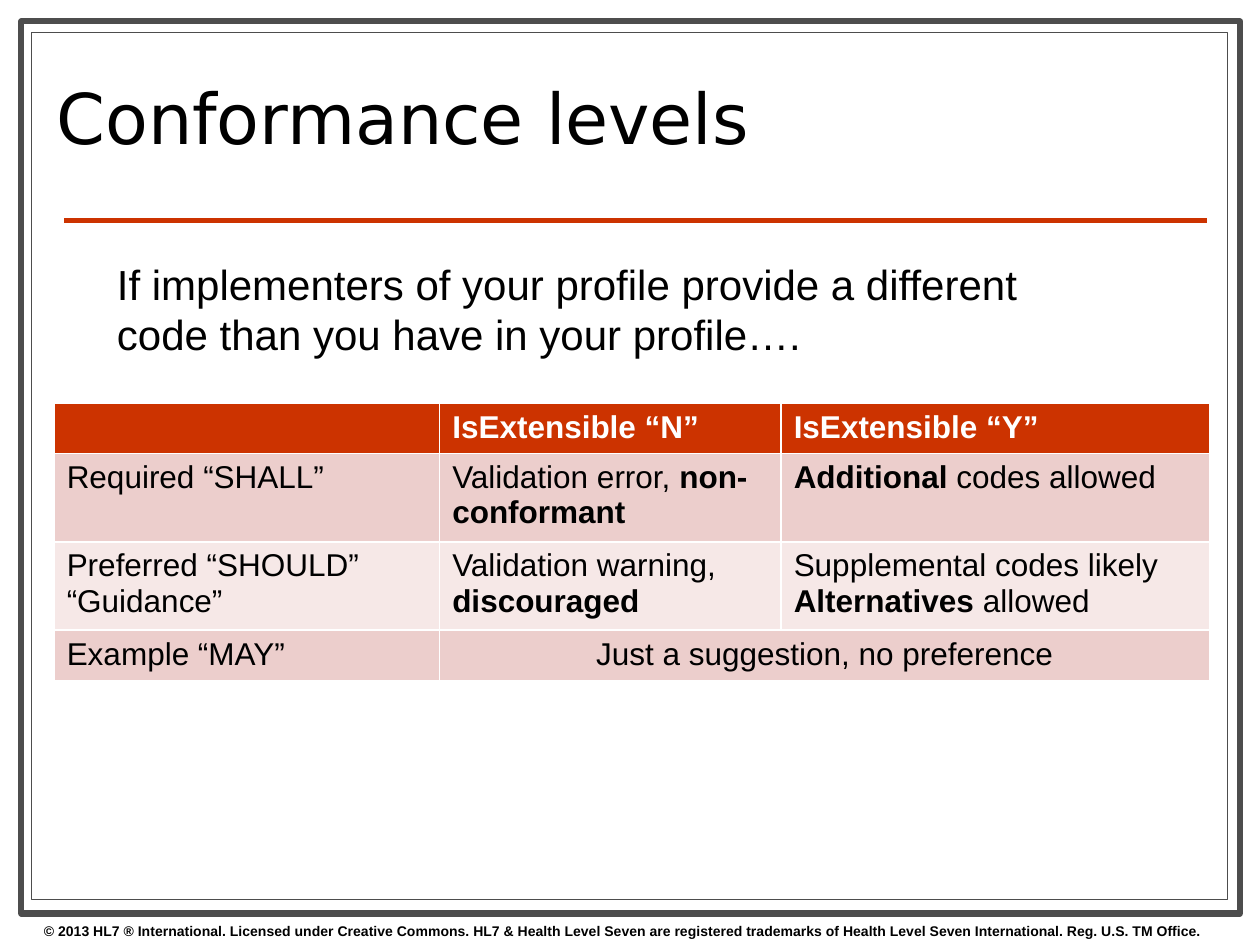
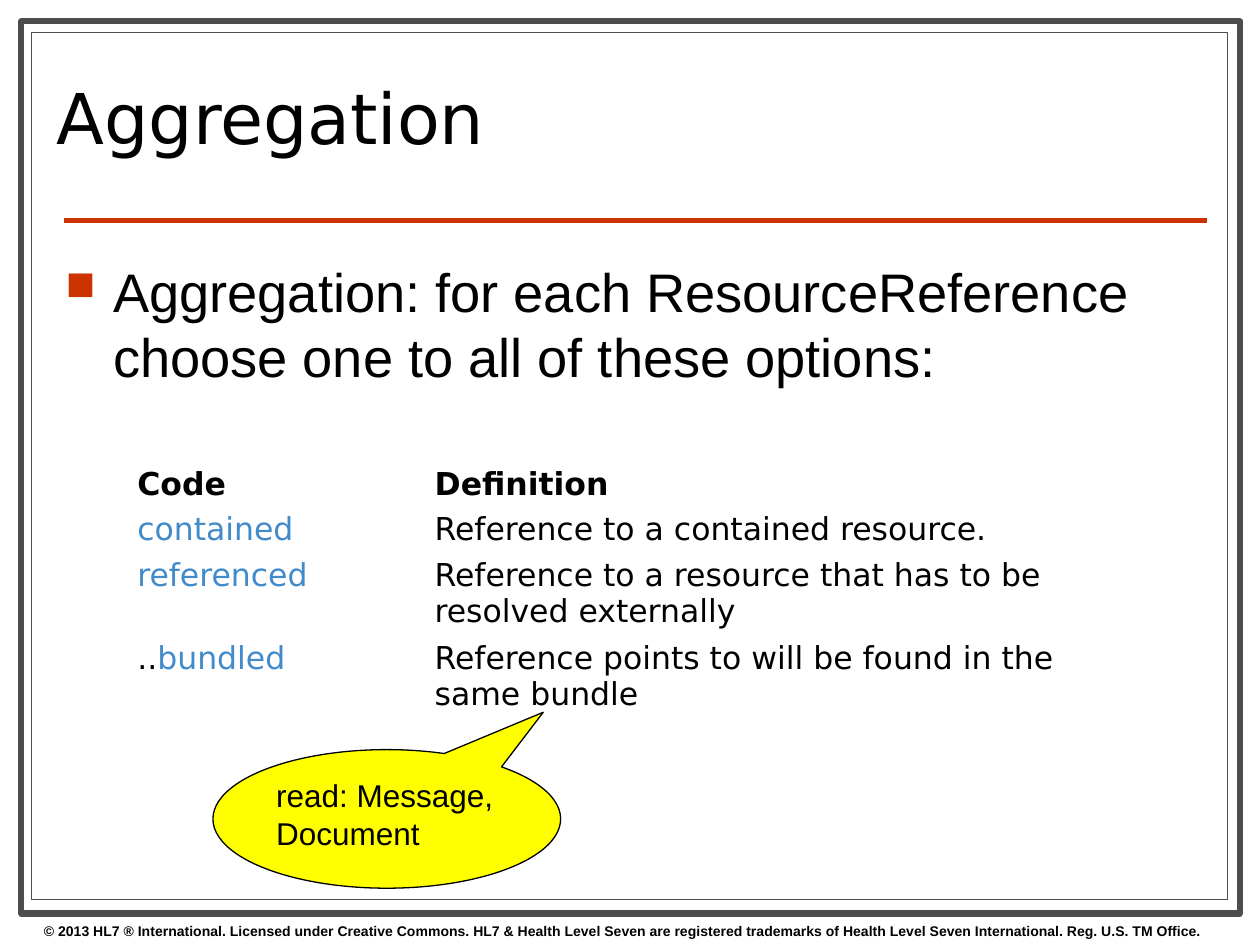
import pptx
import pptx.util
import pptx.dml.color
import pptx.enum.shapes
import pptx.enum.text
import pptx.oxml
import pptx.oxml.ns

Inches, Pt = pptx.util.Inches, pptx.util.Pt
Shape = pptx.enum.shapes.MSO_SHAPE
Align = pptx.enum.text.PP_ALIGN
Anchor = pptx.enum.text.MSO_ANCHOR

# Content: a cell is a list of paragraphs, a paragraph a list of (text, style)
FOOTER = ("© 2013 HL7 ® International. Licensed under Creative Commons. "
          "HL7 & Health Level Seven are registered trademarks of "
          "Health Level Seven International. Reg. U.S. TM Office.")
LEVELS = "Conformance levels"
INTRO = ("If implementers of your profile provide a different code "
         "than you have in your profile….")
RULES = [
    [[], [[("IsExtensible “N”", "b")]], [[("IsExtensible “Y”", "b")]]],
    [[[("Required “SHALL”", "")]],
     [[("Validation error, ", ""), ("non-conformant", "b")]],
     [[("Additional", "b"), (" codes allowed", "")]]],
    [[[("Preferred “SHOULD”", "")], [("“Guidance”", "")]],
     [[("Validation warning, ", ""), ("discouraged", "b")]],
     [[("Supplemental codes likely", "")],
      [("Alternatives", "b"), (" allowed", "")]]],
    [[[("Example “MAY”", "")]], [[("Just a suggestion, no preference", "")]], []],
]
TOPIC = "Aggregation"
POINT = ("Aggregation: for each ResourceReference "
         "choose one to all of these options:")
CODES = [
    [[[("Code", "b")]], [[("Definition", "b")]]],
    [[[("contained", "link")]], [[("Reference to a contained resource.", "")]]],
    [[[("referenced", "link")]],
     [[("Reference to a resource that has to be resolved externally", "")]]],
    [[[("..", ""), ("bundled", "link")]],
     [[("Reference points to will be found in the same bundle", "")]]],
]
HINT = "read: Message, Document"

# Shared look
SANS, HEAD = "Arial", "DejaVu Sans"
BLACK, WHITE, GREY, RED = "000000", "FFFFFF", "4D4D4D", "CC3300"
LINK, YELLOW = "428BCA", "FFFF00"
BANDS = ["ECCECC", "F6E8E7"]
FRAMES = [((0.17, 0.17, 9.67, 7.08), 3.5), ((0.25, 0.26, 9.49, 6.88), 0.75)]


def tint(hue):
    return pptx.dml.color.RGBColor.from_string(hue)


def paint(font, size, face=SANS, hue=BLACK, bold=False):
    font.size, font.name, font.bold = Pt(size), face, bold
    font.color.rgb = tint(hue)


def add_box(slide, place, text, size, **look):
    box = slide.shapes.add_textbox(*map(Inches, place))
    frame = box.text_frame
    frame.word_wrap = True
    frame.text = text
    paint(frame.paragraphs[0].runs[0].font, size, **look)
    return frame


def add_form(slide, kind, place, fill, edge, width):
    form = slide.shapes.add_shape(kind, *map(Inches, place))
    form.shadow.inherit = False
    form.fill.solid()
    form.fill.fore_color.rgb = tint(fill)
    form.line.color.rgb = tint(edge)
    form.line.width = Pt(width)
    return form


def add_grid(slide, left, top, cols, rows, data, fills, face, hues, inset=None):
    grid = slide.shapes.add_table(
        len(rows), len(cols), Inches(left), Inches(top),
        Inches(sum(cols)), Inches(sum(rows))).table
    for col, width in zip(grid.columns, cols):
        col.width = Inches(width)
    for r, (height, line) in enumerate(zip(rows, data)):
        grid.rows[r].height = Inches(height)
        for c, paras in enumerate(line):
            cell = grid.cell(r, c)
            cell.fill.solid()
            cell.fill.fore_color.rgb = tint(fills[r])
            if inset is not None:
                cell.margin_left = cell.margin_right = Inches(inset)
                cell.margin_top = cell.margin_bottom = Inches(inset)
            frame = cell.text_frame
            if not paras:
                frame.paragraphs[0].font.size = Pt(18)
            for i, runs in enumerate(paras):
                para = frame.add_paragraph() if i else frame.paragraphs[0]
                for text, style in runs:
                    run = para.add_run()
                    run.text = text
                    hue = LINK if style == "link" else hues[r]
                    paint(run.font, 18, face, hue, style == "b")
    return grid


def add_bullet(para, indent, hue, size):
    props = para._p.get_or_add_pPr()
    props.set("marL", str(Inches(indent)))
    props.set("indent", str(-Inches(indent)))
    space = pptx.oxml.ns.nsdecls("a")
    for part in (f'<a:buClr {space}><a:srgbClr val="{hue}"/></a:buClr>',
                 f'<a:buSzPct {space} val="{size * 1000}"/>',
                 f'<a:buChar {space} char="■"/>'):
        props.append(pptx.oxml.parse_xml(part))


def add_page(deck, title):
    slide = deck.slides.add_slide(deck.slide_layouts[6])
    # Double frame, rule and footer
    for place, width in FRAMES:
        add_form(slide, Shape.RECTANGLE, place, WHITE, GREY, width)
    rule = slide.shapes.add_connector(
        pptx.enum.shapes.MSO_CONNECTOR.STRAIGHT,
        Inches(0.51), Inches(1.75), Inches(9.58), Inches(1.75))
    rule.line.color.rgb = tint(RED)
    rule.line.width = Pt(3)
    props = rule._element.spPr
    props.append(props.makeelement(pptx.oxml.ns.qn("a:effectLst"), {}))
    add_box(slide, (0.25, 7.27, 10, 0.23), FOOTER, 8, bold=True)
    # Title
    frame = add_box(slide, (0.35, 0.36, 7.17, 1.26), title, 40, face=HEAD)
    frame.vertical_anchor = Anchor.MIDDLE
    frame.paragraphs[0].line_spacing = 0.8
    return slide


def add_levels(deck):
    slide = add_page(deck, LEVELS)
    fills = [RED] + [BANDS[i % 2] for i in range(len(RULES) - 1)]
    hues = [WHITE] + [BLACK] * (len(RULES) - 1)
    grid = add_grid(slide, 0.43, 3.2, [3.06, 2.71, 3.4],
                    [0.4, 0.66, 0.66, 0.4], RULES, fills, SANS, hues)
    wide = grid.cell(3, 1)
    wide.merge(grid.cell(3, 2))
    wide.text_frame.paragraphs[0].alignment = Align.CENTER
    add_box(slide, (0.83, 2, 7.95, 0.91), INTRO, 24)


def add_topic(deck):
    slide = add_page(deck, TOPIC)
    frame = add_box(slide, (0.42, 2, 9.17, 4.9), POINT, 31)
    add_bullet(frame.paragraphs[0], 0.38, RED, 75)
    count = len(CODES)
    add_grid(slide, 1.06, 3.67, [2.36, 5.2], [0.35, 0.35, 0.64, 0.64],
             CODES, [WHITE] * count, HEAD, [BLACK] * count, 0.03)
    # Callout pointing at the last definition
    note = add_form(slide, Shape.OVAL_CALLOUT, (1.69, 5.95, 2.76, 1.1),
                    YELLOW, BLACK, 0.75)
    note.adjustments[0], note.adjustments[1] = 0.45, -0.77
    frame = note.text_frame
    frame.word_wrap = True
    frame.vertical_anchor = Anchor.TOP
    frame.text = HINT
    frame.paragraphs[0].alignment = Align.LEFT
    paint(frame.paragraphs[0].runs[0].font, 18)


def main():
    deck = pptx.Presentation()
    deck.slide_width, deck.slide_height = Inches(10), Inches(7.5)
    add_levels(deck)
    add_topic(deck)
    deck.save("out.pptx")


if __name__ == "__main__":
    main()
